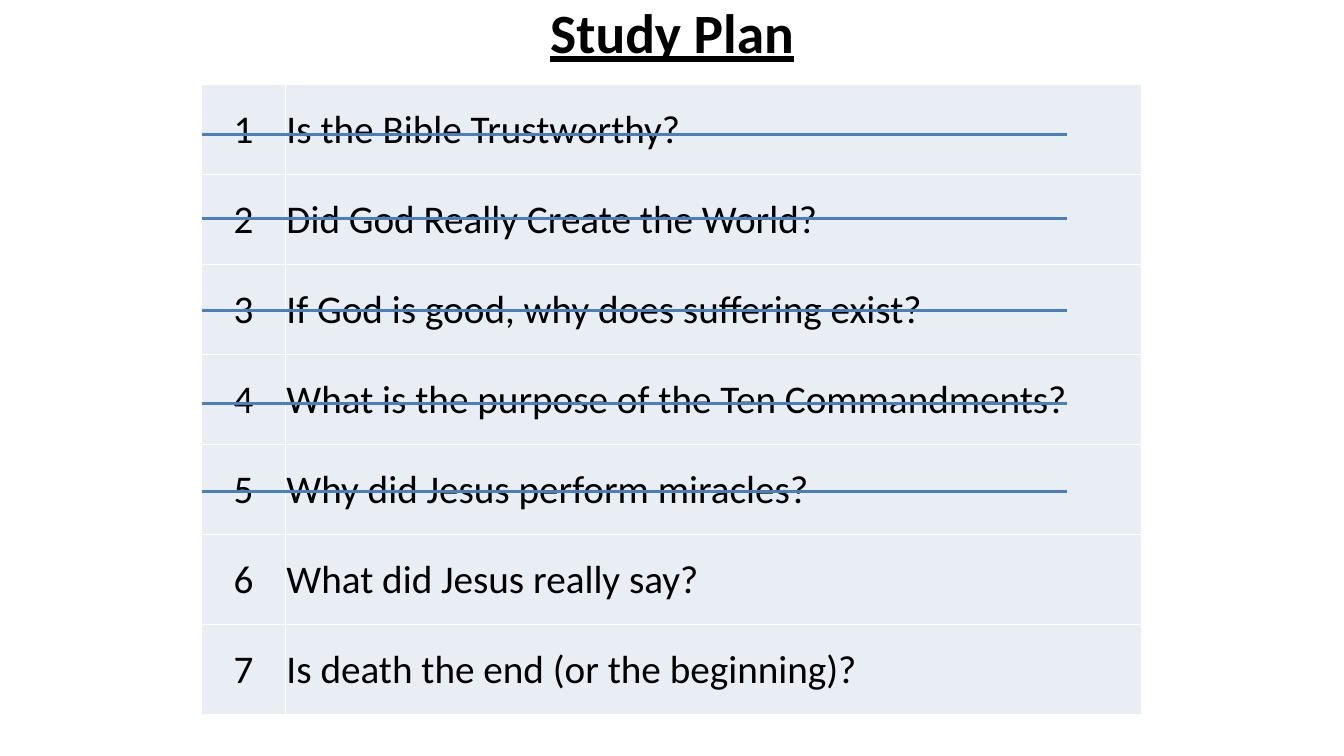
from lxml.etree import SubElement
from pptx import Presentation
from pptx.dml.color import RGBColor as RGB
from pptx.enum.shapes import MSO_CONNECTOR as CONNECTOR
from pptx.enum.text import MSO_ANCHOR as ANCHOR, PP_ALIGN as ALIGN
from pptx.oxml.ns import qn
from pptx.util import Cm, Pt

COLORS = {"text": "000000", "cell": "E9EDF4", "border": "FFFFFF", "strike": "4B7EBC"}
FONT = "Calibri"
TOPICS = [
    "Is the Bible Trustworthy?",
    "Did God Really Create the World?",
    "If God is good, why does suffering exist?",
    "What is the purpose of the Ten Commandments?",
    "Why did Jesus perform miracles?",
    "What did Jesus really say?",
    "Is death the end (or the beginning)?",
]
STRIKE_TOPS = [3.39, 5.5, 7.83, 10.16, 12.38]
LEFT, TOP, ROW_HEIGHT = 5.08, 2.12, 2.27
COL_WIDTHS = [2.11, 21.59]


def style_text(p, size, align):
    p.alignment = align
    p.font.name = FONT
    p.font.size = Pt(size)
    p.font.color.rgb = RGB.from_string(COLORS["text"])


def add_borders(cell):
    tc_pr = cell._tc.get_or_add_tcPr()
    for side in ("a:lnL", "a:lnR", "a:lnT", "a:lnB"):
        ln = SubElement(tc_pr, qn(side), w=str(Pt(1)))
        fill = SubElement(ln, qn("a:solidFill"))
        SubElement(fill, qn("a:srgbClr"), val=COLORS["border"])


prs = Presentation()
prs.slide_width, prs.slide_height = Cm(33.87), Cm(19.05)
s = prs.slides.add_slide(prs.slide_layouts[6])

title = s.shapes.add_textbox(Cm(5.51), Cm(-0.2), Cm(22.86), Cm(1.98))
tf = title.text_frame
tf.word_wrap = True
tf.vertical_anchor = ANCHOR.MIDDLE
p = tf.paragraphs[0]
p.text = "Study Plan"
style_text(p, 39.6, ALIGN.CENTER)
p.font.bold = True
p.font.underline = True

frame = s.shapes.add_table(len(TOPICS), 2, Cm(LEFT), Cm(TOP),
                           Cm(sum(COL_WIDTHS)), Cm(ROW_HEIGHT * len(TOPICS)))
table = frame.table
table.first_row = False
table.horz_banding = False
for col, width in zip(table.columns, COL_WIDTHS):
    col.width = Cm(width)

for i, topic in enumerate(TOPICS):
    table.rows[i].height = Cm(ROW_HEIGHT)
    for j, (text, align) in enumerate([(str(i + 1), ALIGN.CENTER), (topic, ALIGN.LEFT)]):
        cell = table.cell(i, j)
        cell.margin_left = cell.margin_right = cell.margin_top = Cm(0.03)
        cell.margin_bottom = 0
        cell.vertical_anchor = ANCHOR.MIDDLE
        add_borders(cell)
        cell.fill.solid()
        cell.fill.fore_color.rgb = RGB.from_string(COLORS["cell"])
        p = cell.text_frame.paragraphs[0]
        p.text = text
        style_text(p, 28, align)

for y in STRIKE_TOPS:
    strike = s.shapes.add_connector(CONNECTOR.STRAIGHT, Cm(LEFT), Cm(y), Cm(26.88), Cm(y))
    strike.line.color.rgb = RGB.from_string(COLORS["strike"])
    strike.line.width = Pt(2.25)
    SubElement(strike._element.spPr, qn("a:effectLst"))

prs.save("out.pptx")
